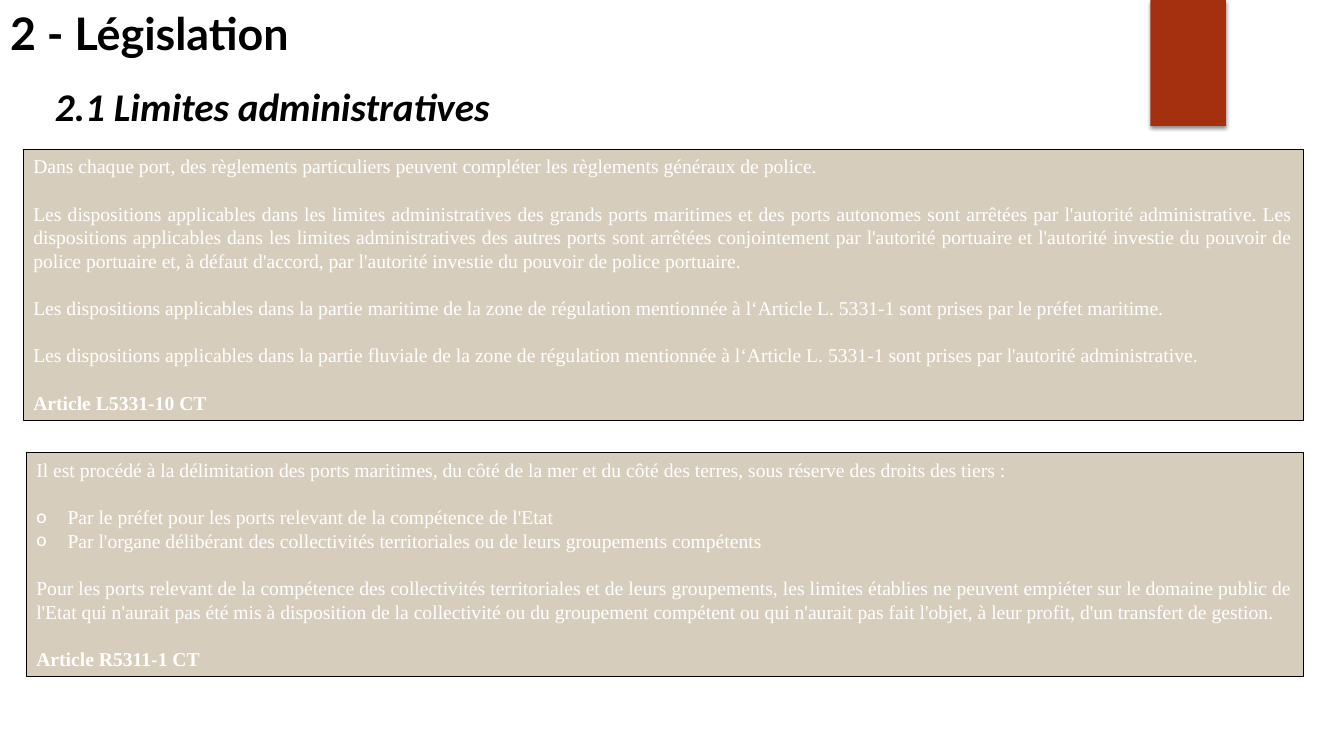
"""Build the slide on the administrative limits of ports."""
import dataclasses

import lxml.etree
import pptx
import pptx.dml.color
import pptx.enum.shapes
import pptx.enum.text
import pptx.oxml.ns
import pptx.util

PX = 9144
ALIGN = pptx.enum.text.PP_ALIGN
ANCHOR = pptx.enum.text.MSO_ANCHOR
COLORS = {"heading": "000000", "article": "FFFFFF", "panel": "B19C7D",
          "border": "000000", "ribbon": "A5300F", "shadow": "000000"}
BLANK_LINE = 17
BULLET_INDENT = 31


@dataclasses.dataclass(frozen=True)
class Box:
    left: int
    top: int
    width: int
    height: int


@dataclasses.dataclass(frozen=True)
class Passage:
    text: str
    gap: int = BLANK_LINE
    bullet: bool = False
    bold: bool = False


@dataclasses.dataclass(frozen=True)
class Article:
    box: Box
    passages: tuple[Passage, ...]


ARTICLES = (
    Article(Box(23, 148, 1270, 269), (
        Passage("Dans chaque port, des règlements particuliers peuvent compléter les règlements généraux de police.", gap=0),
        Passage("Les dispositions applicables dans les limites administratives des grands ports maritimes et des ports "
                "autonomes sont arrêtées par l'autorité administrative. Les dispositions applicables dans les limites "
                "administratives des autres ports sont arrêtées conjointement par l'autorité portuaire et l'autorité "
                "investie du pouvoir de police portuaire et, à défaut d'accord, par l'autorité investie du pouvoir de "
                "police portuaire."),
        Passage("Les dispositions applicables dans la partie maritime de la zone de régulation mentionnée à "
                "l‘Article L. 5331-1 sont prises par le préfet maritime."),
        Passage("Les dispositions applicables dans la partie fluviale de la zone de régulation mentionnée à "
                "l‘Article L. 5331-1 sont prises par l'autorité administrative."),
        Passage("Article L5331-10 CT", bold=True))),
    Article(Box(26, 449, 1267, 222), (
        Passage("Il est procédé à la délimitation des ports maritimes, du côté de la mer et du côté des terres, "
                "sous réserve des droits des tiers :", gap=0),
        Passage("Par le préfet pour les ports relevant de la compétence de l'Etat", bullet=True),
        Passage("Par l'organe délibérant des collectivités territoriales ou de leurs groupements compétents",
                gap=0, bullet=True),
        Passage("Pour les ports relevant de la compétence des collectivités territoriales et de leurs groupements, "
                "les limites établies ne peuvent empiéter sur le domaine public de l'Etat qui n'aurait pas été mis à "
                "disposition de la collectivité ou du groupement compétent ou qui n'aurait pas fait l'objet, à leur "
                "profit, d'un transfert de gestion."),
        Passage("Article R5311-1 CT", bold=True))),
)


def rgb(name: str) -> pptx.dml.color.RGBColor:
    """Return a named colour of the slide."""
    return pptx.dml.color.RGBColor.from_string(COLORS[name])


def add_xml(parent, tag: str, **attributes: str):
    """Append a DrawingML element and return it."""
    return lxml.etree.SubElement(parent, pptx.oxml.ns.qn(tag), attributes)


def emu(box: Box) -> tuple[int, ...]:
    """Return the box as left, top, width and height in EMU."""
    return tuple(length * PX for length in dataclasses.astuple(box))


def place(shape, box: Box, anchor=ANCHOR.TOP) -> None:
    """Move a text shape and set up its frame."""
    shape.left, shape.top, shape.width, shape.height = emu(box)
    shape.text_frame.auto_size = pptx.enum.text.MSO_AUTO_SIZE.NONE
    shape.text_frame.word_wrap = True
    shape.text_frame.vertical_anchor = anchor


def write(paragraph, text: str, *, font: str, size: int, color: str, align=ALIGN.LEFT,
          bold: bool = False, italic: bool = False, bullet: bool = False, gap: int = 0) -> None:
    """Fill a paragraph with formatted text."""
    properties = paragraph._p.get_or_add_pPr()
    indent = BULLET_INDENT * PX if bullet else 0
    properties.set("marL", str(indent))
    properties.set("indent", str(-indent))
    if bullet:
        add_xml(properties, "a:buFont", typeface="Calibri")
        add_xml(properties, "a:buChar", char="o")
    else:
        add_xml(properties, "a:buNone")
    paragraph.alignment = align
    paragraph.line_spacing = 1.0
    paragraph.space_before = pptx.util.Pt(gap)
    paragraph.space_after = pptx.util.Pt(0)
    run = paragraph.add_run()
    run.text = text
    run.font.name = font
    run.font.size = pptx.util.Pt(size)
    run.font.bold = bold
    run.font.italic = italic
    run.font.color.rgb = rgb(color)


def draw_article(panel, article: Article) -> None:
    """Turn a body placeholder into a bordered article panel."""
    place(panel, article.box)
    panel.fill.solid()
    panel.fill.fore_color.rgb = rgb("panel")
    add_xml(panel._element.spPr.find(".//" + pptx.oxml.ns.qn("a:srgbClr")), "a:alpha", val="50000")
    panel.line.color.rgb = rgb("border")
    panel.line.width = pptx.util.Pt(0.75)
    frame = panel.text_frame
    for number, passage in enumerate(article.passages):
        paragraph = frame.add_paragraph() if number else frame.paragraphs[0]
        write(paragraph, passage.text, font="Times New Roman", size=14, color="article",
              align=ALIGN.LEFT if passage.bullet or passage.bold else ALIGN.JUSTIFY,
              bold=passage.bold, bullet=passage.bullet, gap=passage.gap)


def draw_ribbon(slide, box: Box) -> None:
    """Draw the red ribbon with its soft shadow."""
    ribbon = slide.shapes.add_shape(pptx.enum.shapes.MSO_SHAPE.RECTANGLE, *emu(box))
    ribbon.fill.solid()
    ribbon.fill.fore_color.rgb = rgb("ribbon")
    ribbon.line.fill.background()
    ribbon.shadow.inherit = False
    effects = ribbon._element.spPr.find(pptx.oxml.ns.qn("a:effectLst"))
    shadow = add_xml(effects, "a:outerShdw", blurRad=str(pptx.util.Pt(3)), dist=str(pptx.util.Pt(2)),
                     dir="5400000", rotWithShape="0")
    add_xml(add_xml(shadow, "a:srgbClr", val=COLORS["shadow"]), "a:alpha", val="45000")


def main() -> None:
    """Build and save the presentation."""
    deck = pptx.Presentation()
    deck.slide_width, deck.slide_height = 1333 * PX, 750 * PX
    slide = deck.slides.add_slide(deck.slide_layouts[3])
    title, *panels = slide.placeholders
    place(title, Box(0, 0, 361, 64), ANCHOR.MIDDLE)
    write(title.text_frame.paragraphs[0], "2 - Législation", font="Lato", size=32, color="heading", bold=True)
    for panel, article in zip(panels, ARTICLES):
        draw_article(panel, article)
    section_box = Box(-32, 77, 604, 57)
    section = slide.shapes.add_textbox(*emu(section_box))
    place(section, section_box)
    write(section.text_frame.paragraphs[0], "2.1 Limites administratives", font="Calibri", size=28,
          color="heading", align=ALIGN.CENTER, bold=True, italic=True)
    draw_ribbon(slide, Box(1141, 0, 75, 125))
    deck.save("out.pptx")


if __name__ == "__main__":
    main()
